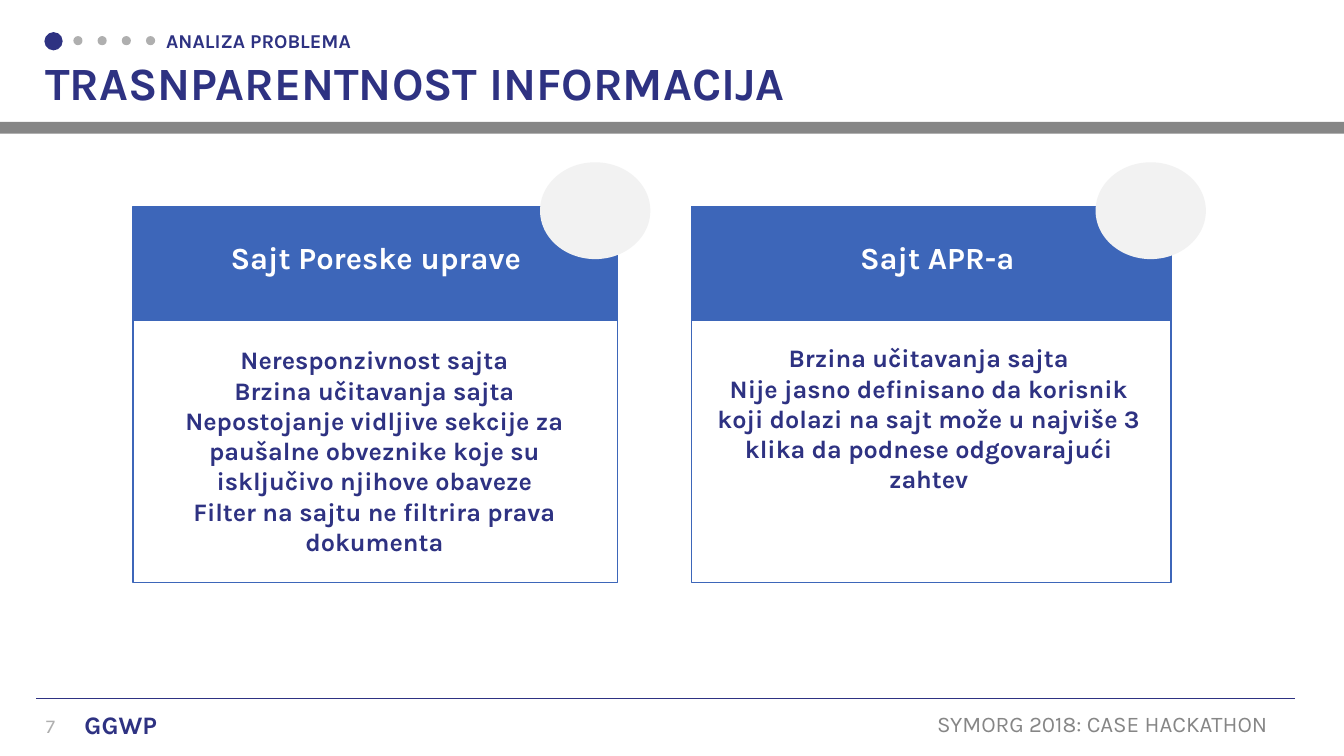
import pptx
import pptx.util
import pptx.dml.color
import pptx.enum.shapes
import pptx.enum.text
import pptx.oxml.ns
import lxml.etree

Cm = pptx.util.Cm
Pt = pptx.util.Pt
RGBColor = pptx.dml.color.RGBColor
MSO_SHAPE = pptx.enum.shapes.MSO_SHAPE
PP_ALIGN = pptx.enum.text.PP_ALIGN
MSO_ANCHOR = pptx.enum.text.MSO_ANCHOR

NAVY = RGBColor(0x2E, 0x32, 0x82)
BLUE = RGBColor(0x3D, 0x66, 0xB9)
GRAY = RGBColor(0x86, 0x86, 0x86)
SILVER = RGBColor(0xAF, 0xAF, 0xAF)
PALE = RGBColor(0xF2, 0xF2, 0xF2)
WHITE = RGBColor(0xFF, 0xFF, 0xFF)

prs = pptx.Presentation()
prs.slide_width = Cm(33.87)
prs.slide_height = Cm(19.05)
s = prs.slides.add_slide(prs.slide_layouts[6])


def add_shape(kind, x, y, w, h, fill=None, line=None):
    sp = s.shapes.add_shape(kind, Cm(x), Cm(y), Cm(w), Cm(h))
    sp.shadow.inherit = False
    if fill is None:
        sp.fill.background()
    else:
        sp.fill.solid()
        sp.fill.fore_color.rgb = fill
    if line is None:
        sp.line.fill.background()
    else:
        sp.line.color.rgb = line
        sp.line.width = Pt(1)
    return sp


def add_text(text, x, y, w, h, size, color, bold=True, align=PP_ALIGN.LEFT, wrap=True, spacing=1.0):
    tf = s.shapes.add_textbox(Cm(x), Cm(y), Cm(w), Cm(h)).text_frame
    tf.word_wrap = wrap
    tf.text = text
    for p in tf.paragraphs:
        p.alignment = align
        p.line_spacing = spacing
        for r in p.runs:
            r.font.name = "Karla"
            r.font.size = Pt(size)
            r.font.bold = bold
            r.font.color.rgb = color
    return tf


add_shape(MSO_SHAPE.RECTANGLE, 0, 3.07, 33.87, 0.3, GRAY)
add_shape(MSO_SHAPE.OVAL, 1.12, 0.81, 0.46, 0.46, NAVY)
for i in range(4):
    add_shape(MSO_SHAPE.OVAL, 1.85 + 0.61 * i, 0.91, 0.23, 0.23, SILVER)
add_text("ANALIZA PROBLEMA", 3.94, 0.66, 6.83, 0.71, 14, NAVY, spacing=0.9)
tf = add_text("TRASNPARENTNOST INFORMACIJA", 0.89, 1.47, 32.11, 1.45, 33, NAVY, spacing=0.9)
tf.vertical_anchor = MSO_ANCHOR.BOTTOM

cards = [
    ("Sajt Poreske uprave", 3.35, 12.22, 13.61, 4.06, 10.82, 3.86, 8.56, 5.64,
     ["Neresponzivnost sajta",
      "Brzina učitavanja sajta",
      "Nepostojanje vidljive sekcije za paušalne obveznike koje su isključivo njihove obaveze",
      "Filter na sajtu ne filtrira prava dokumenta"]),
    ("Sajt APR-a", 17.42, 12.09, 27.61, 18.26, 10.72, 17.83, 8.51, 4.11,
     ["Brzina učitavanja sajta",
      "Nije jasno definisano da korisnik koji dolazi na sajt može u najviše 3 klika "
      "da podnese odgovarajući zahtev"]),
]
for heading, x, w, badge_x, head_x, head_w, body_x, body_y, body_h, points in cards:
    add_shape(MSO_SHAPE.RECTANGLE, x, 5.21, w, 2.87, BLUE, BLUE)
    add_shape(MSO_SHAPE.RECTANGLE, x, 6.93, w, 7.75, line=BLUE)
    add_shape(MSO_SHAPE.OVAL, badge_x, 4.09, 2.78, 2.44, PALE)
    add_text(heading, head_x, 5.89, head_w, 1.47, 22, WHITE, align=PP_ALIGN.CENTER)
    add_text("\n".join(points), body_x, body_y, 11.15, body_h, 18, NAVY, align=PP_ALIGN.CENTER)

rule = s.shapes.add_connector(pptx.enum.shapes.MSO_CONNECTOR.STRAIGHT, Cm(0.91), Cm(17.6), Cm(32.64), Cm(17.6))
rule.line.color.rgb = NAVY
rule.line.width = Pt(0.5)
lxml.etree.SubElement(rule._element.spPr, pptx.oxml.ns.qn("a:effectLst"))
add_text("7", 0.91, 17.86, 2.62, 1.7, 14, SILVER, bold=False)
add_text("GGWP", 1.88, 17.75, 2.46, 1.02, 18, NAVY, wrap=False)
add_text("SYMORG 2018: CASE HACKATHON", 23.37, 17.78, 9.27, 0.94, 16, GRAY, bold=False, wrap=False)

prs.save("out.pptx")
